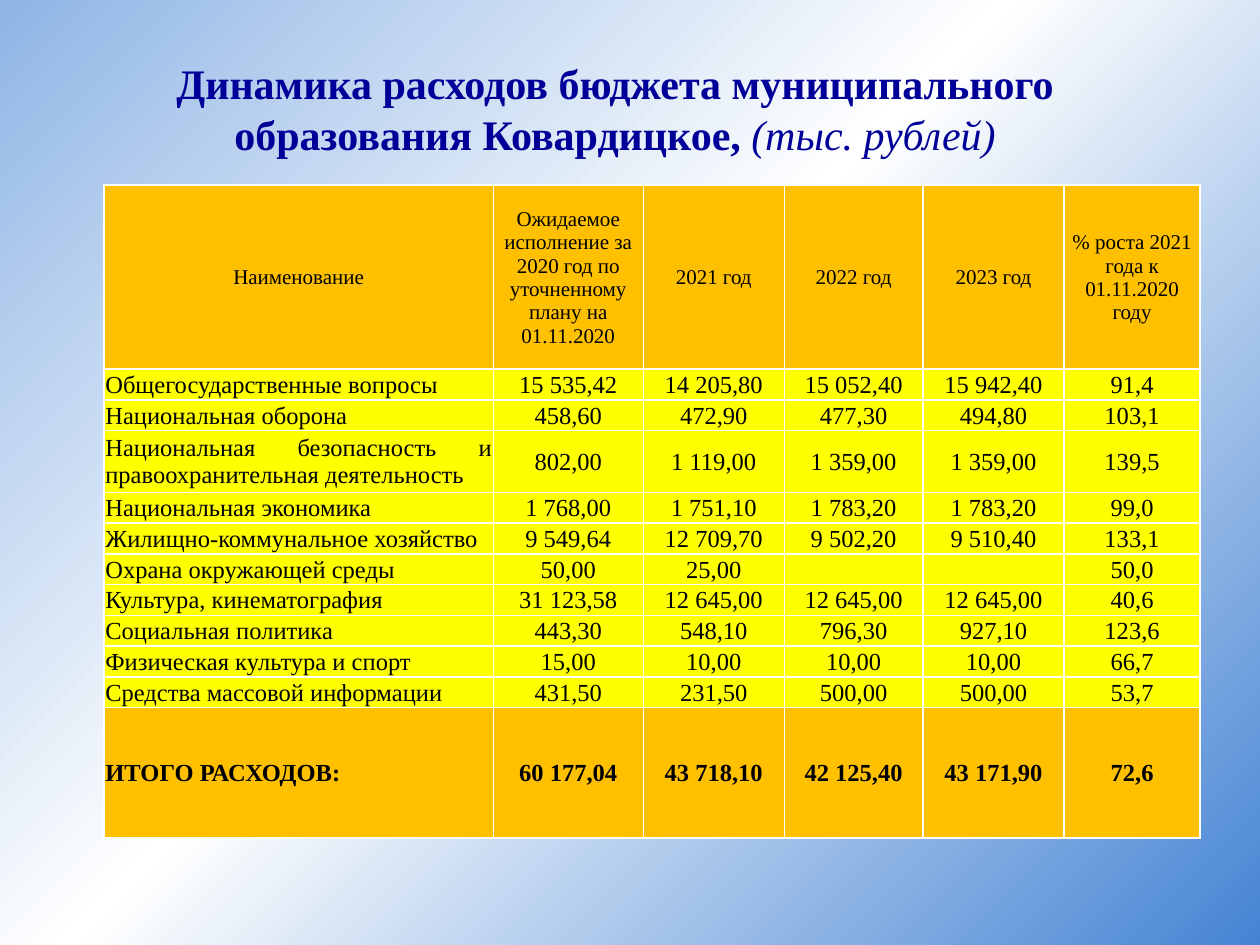
from copy import deepcopy

from pptx import Presentation
from pptx.dml.color import RGBColor
from pptx.enum.text import MSO_ANCHOR, MSO_AUTO_SIZE, PP_ALIGN
from pptx.oxml import parse_xml
from pptx.oxml.ns import nsdecls, qn
from pptx.util import Pt

CENTER, JUSTIFY = PP_ALIGN.CENTER, PP_ALIGN.JUSTIFY
MIDDLE = MSO_ANCHOR.MIDDLE
GROW = MSO_AUTO_SIZE.SHAPE_TO_FIT_TEXT

FONT = "Times New Roman"
NAVY = RGBColor(0x00, 0x00, 0x99)
BLACK = RGBColor(0x00, 0x00, 0x00)
WHITE = RGBColor(0xFF, 0xFF, 0xFF)
ORANGE = RGBColor(0xFF, 0xC0, 0x00)
YELLOW = RGBColor(0xFF, 0xFF, 0x00)
LIGHT_BLUE = RGBColor(0x8F, 0xB5, 0xE5)
BLUE = RGBColor(0x45, 0x84, 0xD3)

BACKGROUND_STOPS = [(0, LIGHT_BLUE), (0.46, WHITE), (1, BLUE)]
COLUMN_WIDTHS = [222.4, 85.7, 80.6, 79.3, 80.6, 77.8]
HEADER_HEIGHT, LINE_HEIGHT, TOTAL_HEIGHT = 105.2, 17.6, 74.6
TWO_LINE_ROW = 3

ROWS = [
    ["Наименование", "Ожидаемое исполнение за 2020 год по уточненному плану на 01.11.2020",
     "2021 год", "2022 год", "2023 год", "% роста 2021 года к 01.11.2020 году"],
    ["Общегосударственные вопросы", "15 535,42", "14 205,80", "15 052,40", "15 942,40", "91,4"],
    ["Национальная оборона", "458,60", "472,90", "477,30", "494,80", "103,1"],
    ["Национальная безопасность и правоохранительная деятельность",
     "802,00", "1 119,00", "1 359,00", "1 359,00", "139,5"],
    ["Национальная экономика", "1 768,00", "1 751,10", "1 783,20", "1 783,20", "99,0"],
    ["Жилищно-коммунальное хозяйство", "9 549,64", "12 709,70", "9 502,20", "9 510,40", "133,1"],
    ["Охрана окружающей среды", "50,00", "25,00", "", "", "50,0"],
    ["Культура, кинематография", "31 123,58", "12 645,00", "12 645,00", "12 645,00", "40,6"],
    ["Социальная политика", "443,30", "548,10", "796,30", "927,10", "123,6"],
    ["Физическая культура и спорт", "15,00", "10,00", "10,00", "10,00", "66,7"],
    ["Средства массовой информации", "431,50", "231,50", "500,00", "500,00", "53,7"],
    ["ИТОГО РАСХОДОВ:", "60 177,04", "43 718,10", "42 125,40", "43 171,90", "72,6"],
]


def paint_background(slide):
    """Diagonal gradient from the top left to the bottom right."""
    fill = slide.background.fill
    fill.gradient()
    fill.gradient_angle = 315
    first_stop = next(slide.element.iter(qn("a:gs")))
    first_stop.addnext(deepcopy(first_stop))
    for stop, (position, color) in zip(fill.gradient_stops, BACKGROUND_STOPS):
        stop.position = position
        stop.color.rgb = color


def add_title(slide, left, top, width, height):
    box = slide.shapes.add_textbox(Pt(left), Pt(top), Pt(width), Pt(height))
    frame = box.text_frame
    frame.word_wrap = True
    frame.auto_size = GROW
    paragraph = frame.paragraphs[0]
    paragraph.alignment = CENTER
    paragraph.font.name = FONT
    paragraph.font.size = Pt(24)
    paragraph.font.color.rgb = NAVY
    name = paragraph.add_run()
    name.text = "Динамика расходов бюджета муниципального образования Ковардицкое, "
    name.font.bold = True
    unit = paragraph.add_run()
    unit.text = "(тыс. рублей)"
    unit.font.italic = True


def add_borders(cell):
    properties = cell._tc.get_or_add_tcPr()
    for index, side in enumerate(("lnL", "lnR", "lnT", "lnB")):
        properties.insert(index, parse_xml(
            f'<a:{side} {nsdecls("a")} w="{Pt(1)}"><a:solidFill>'
            f'<a:srgbClr val="{WHITE}"/></a:solidFill></a:{side}>'))


def fill_cell(cell, text, alignment, size, bold, color):
    cell.fill.solid()
    cell.fill.fore_color.rgb = color
    cell.vertical_anchor = MIDDLE
    cell.margin_left = cell.margin_right = cell.margin_top = Pt(0.7)
    cell.margin_bottom = 0
    cell.text = text
    paragraph = cell.text_frame.paragraphs[0]
    paragraph.alignment = alignment
    paragraph.font.name = FONT
    paragraph.font.size = Pt(size)
    paragraph.font.bold = bold
    paragraph.font.color.rgb = BLACK
    if not text:
        # An empty cell takes its line height from the end mark
        paragraph._p.get_or_add_endParaRPr().set("sz", str(size * 100))
    add_borders(cell)


def add_expense_table(slide, left, top, width, height):
    table = slide.shapes.add_table(
        len(ROWS), len(COLUMN_WIDTHS), Pt(left), Pt(top), Pt(width), Pt(height)).table
    for column, column_width in zip(table.columns, COLUMN_WIDTHS):
        column.width = Pt(column_width)

    last = len(ROWS) - 1
    special_heights = {0: HEADER_HEIGHT, TWO_LINE_ROW: 2 * LINE_HEIGHT, last: TOTAL_HEIGHT}
    for row_index, texts in enumerate(ROWS):
        is_header, is_total = row_index == 0, row_index == last
        table.rows[row_index].height = Pt(special_heights.get(row_index, LINE_HEIGHT))
        for column_index, text in enumerate(texts):
            is_label = column_index == 0 and not is_header
            fill_cell(table.cell(row_index, column_index), text,
                      alignment=JUSTIFY if is_label else CENTER,
                      size=12 if is_header else 14,
                      bold=is_total,
                      color=ORANGE if is_header or is_total else YELLOW)


def main():
    presentation = Presentation()
    presentation.slide_width, presentation.slide_height = Pt(720), Pt(540)
    slide = presentation.slides.add_slide(presentation.slide_layouts[6])
    paint_background(slide)
    add_title(slide, 59.5, 29.5, 584, 65.5)
    add_expense_table(slide, 59.5, 105.8, 626.4, 373.4)
    presentation.save("out.pptx")


if __name__ == "__main__":
    main()
